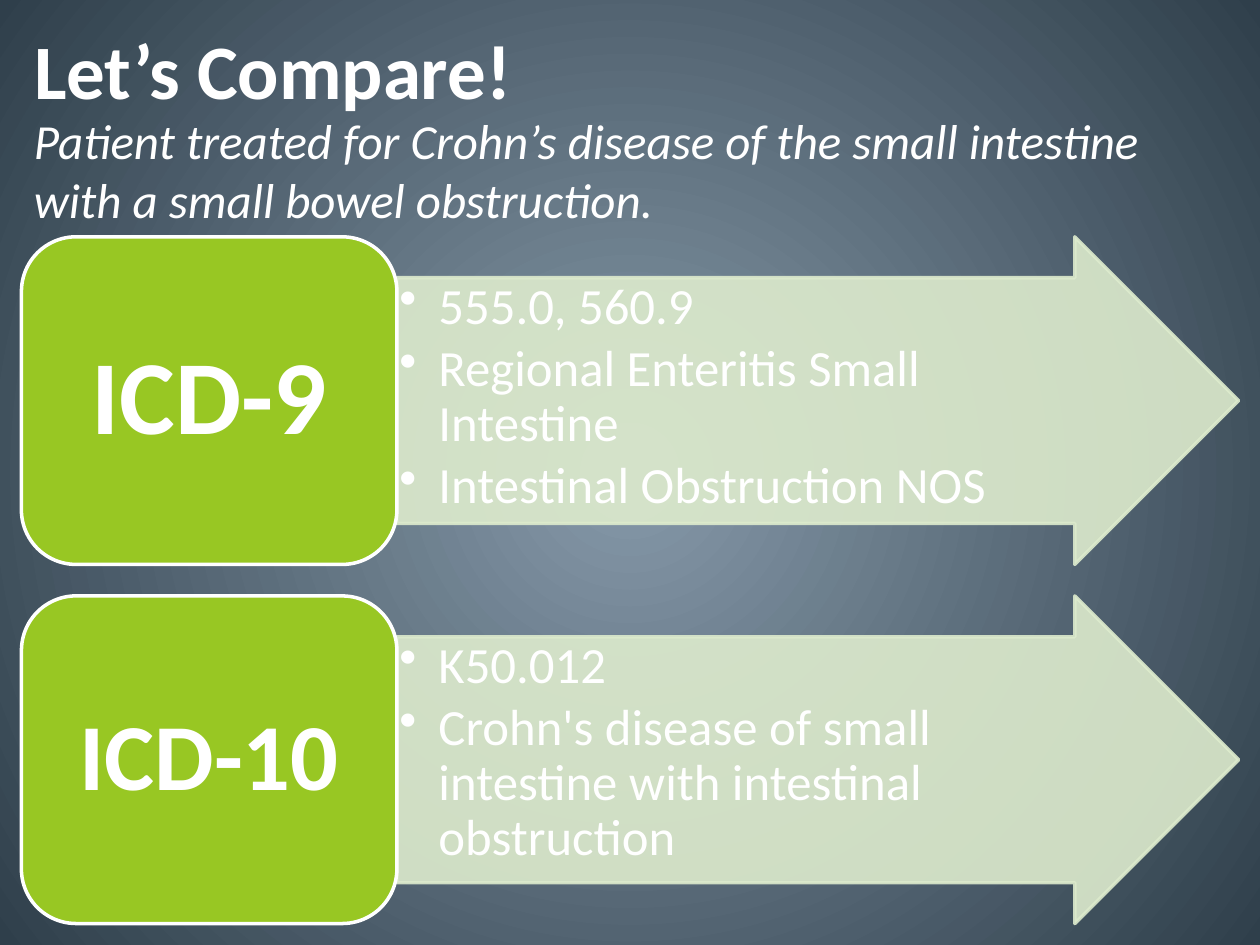
"""Build a slide comparing ICD-9 and ICD-10 coding of one diagnosis."""
from lxml.etree import SubElement
from pptx import Presentation
from pptx.dml.color import RGBColor
from pptx.enum.shapes import MSO_SHAPE as Shape
from pptx.enum.text import MSO_ANCHOR as Anchor, MSO_AUTO_SIZE as AutoSize, PP_ALIGN as Align
from pptx.oxml.ns import qn
from pptx.util import Inches, Pt

COLORS = {"center": "8699A9", "edge": "2F3F4B", "arrow": "DDEBCD", "label": "98C723", "white": "FFFFFF"}
FONT = "Calibri"
LEFT, TOP, ROW_HEIGHT, ROW_PITCH = 0.17, 1.88, 2.6, 2.85
LABEL_WIDTH, ARROW_WIDTH = 2.98, 6.68
ROWS = [
    ("ICD-9", 60, 0.25, ["555.0, 560.9", "Regional Enteritis Small Intestine", "Intestinal Obstruction NOS"]),
    ("ICD-10", 54, 0.23, ["K50.012", "Crohn's disease of small intestine with intestinal obstruction"]),
]


def color(name):
    """Return the named palette colour."""
    return RGBColor.from_string(COLORS[name])


def set_background(slide):
    """Fill the background with a gradient radiating from the centre."""
    fill = slide.background.fill
    fill.gradient()
    for stop, position, name in zip(fill.gradient_stops, (0, 1), ("center", "edge")):
        stop.position = position
        stop.color.rgb = color(name)
    gradient = slide.element.find(".//" + qn("a:gradFill"))
    gradient.remove(gradient.find(qn("a:lin")))
    circle = SubElement(gradient, qn("a:path"), {"path": "circle"})
    SubElement(circle, qn("a:fillToRect"), dict.fromkeys("ltrb", "50000"))


def set_text(frame, lines, size, align=Align.LEFT, bold=False, italic=False):
    """Write white paragraphs into a text frame."""
    frame.word_wrap = True
    frame.text = "\n".join(lines)
    for paragraph in frame.paragraphs:
        paragraph.alignment = align
        for run in paragraph.runs:
            font = run.font
            font.name, font.size, font.bold, font.italic = FONT, Pt(size), bold, italic
            font.color.rgb = color("white")


def set_margins(frame, left, top, right, bottom):
    """Set the text margins in inches."""
    frame.margin_left, frame.margin_top = Inches(left), Inches(top)
    frame.margin_right, frame.margin_bottom = Inches(right), Inches(bottom)


def add_block(slide, kind, left, top, width, fill, line):
    """Add one filled and outlined shape of row height."""
    shape = slide.shapes.add_shape(kind, Inches(left), Inches(top), Inches(width), Inches(ROW_HEIGHT))
    shape.shadow.inherit = False
    shape.fill.solid()
    shape.fill.fore_color.rgb = color(fill)
    shape.line.color.rgb = color(line)
    shape.line.width = Pt(2)
    return shape


def add_arrow(slide, top, items):
    """Add a translucent arrow holding a bulleted list."""
    arrow = add_block(slide, Shape.RIGHT_ARROW, LEFT + LABEL_WIDTH, top, ARROW_WIDTH, "arrow", "arrow")
    arrow.adjustments[0], arrow.adjustments[1] = 0.75, 0.5
    for tint in arrow.element.spPr.iter(qn("a:srgbClr")):
        SubElement(tint, qn("a:alpha"), val="90000")
    frame = arrow.text_frame
    set_text(frame, items, 29)
    set_margins(frame, 0.02, 0.02, 0.68, 0.02)
    frame.vertical_anchor = Anchor.TOP
    for paragraph in frame.paragraphs:
        paragraph.line_spacing = 0.9
        paragraph.space_after = Pt(4.35)
        properties = paragraph._p.get_or_add_pPr()
        properties.set("marL", str(Inches(0.31)))
        properties.set("indent", str(Inches(-0.31)))
        SubElement(properties, qn("a:buChar"), char="•")


def add_label(slide, top, text, size, margin):
    """Add a rounded label with a large centred code name."""
    label = add_block(slide, Shape.ROUNDED_RECTANGLE, LEFT, top, LABEL_WIDTH, "label", "white")
    frame = label.text_frame
    set_text(frame, [text], size, Align.CENTER, bold=True)
    set_margins(frame, margin, margin / 2, margin, margin / 2)
    frame.vertical_anchor = Anchor.MIDDLE
    frame.paragraphs[0].line_spacing = 0.9


def add_case(slide, text):
    """Add the italic case description under the title."""
    box = slide.shapes.add_textbox(Inches(LEFT), Inches(0.83), Inches(9.33), Inches(1.04))
    set_text(box.text_frame, [text], 28, italic=True)


def set_title(slide, text):
    """Place and format the title."""
    title = slide.shapes.title
    title.left, title.top, title.width, title.height = Inches(LEFT), Inches(-0.08), Inches(9), Inches(1.25)
    set_text(title.text_frame, [text], 44, bold=True)
    title.text_frame.auto_size = AutoSize.NONE
    title.text_frame.vertical_anchor = Anchor.MIDDLE


def main():
    """Build and save the slide."""
    presentation = Presentation()
    presentation.slide_width, presentation.slide_height = Inches(10), Inches(7.5)
    slide = presentation.slides.add_slide(presentation.slide_layouts[5])
    set_background(slide)
    for index, (name, size, margin, items) in enumerate(ROWS):
        top = TOP + index * ROW_PITCH
        add_arrow(slide, top, items)
        add_label(slide, top, name, size, margin)
    add_case(slide, "Patient treated for Crohn’s disease of the small intestine with a small bowel obstruction.")
    set_title(slide, "Let’s Compare!")
    presentation.save("out.pptx")


if __name__ == "__main__":
    main()
